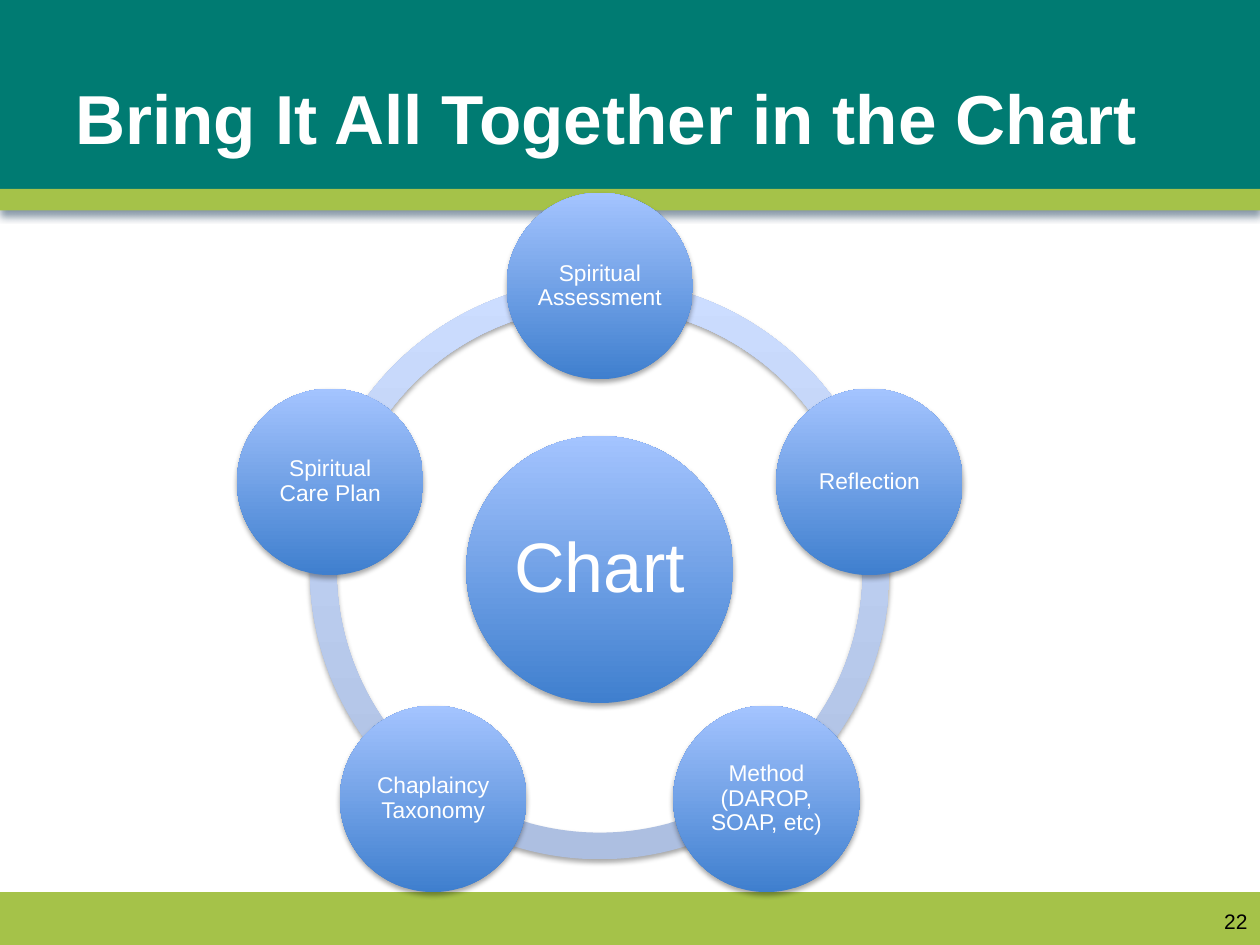
import math

from lxml import etree
from pptx import Presentation
from pptx.dml.color import RGBColor
from pptx.enum import shapes, text
from pptx.oxml.ns import qn
from pptx.util import Inches, Pt

SHAPE = shapes.MSO_SHAPE
ALIGN = text.PP_ALIGN
TEAL, GREEN, WHITE = "007B72", "A5C249", "FFFFFF"
NODE_GRADIENT = ("3F7FCE", "A4C4FF")
RING_GRADIENT = ("ADBFE1", "CCDDFF")
STEPS = ["Spiritual Assessment", "Reflection", "Method (DAROP, SOAP, etc)",
         "Chaplaincy Taxonomy", "Spiritual Care Plan"]


def rgb(value):
    return RGBColor.from_string(value)


def add_shadow(sp, color, alpha, blur, dist):
    effects = sp._element.spPr.find(qn("a:effectLst"))
    shadow = etree.SubElement(effects, qn("a:outerShdw"), blurRad=str(Pt(blur)),
                              dist=str(Pt(dist)), dir="5400000", rotWithShape="0")
    clr = etree.SubElement(shadow, qn("a:srgbClr"), val=color)
    etree.SubElement(clr, qn("a:alpha"), val=str(alpha * 1000))


def add_plain(s, kind, x, y, w, h):
    sp = s.shapes.add_shape(kind, Inches(x), Inches(y), Inches(w), Inches(h))
    sp.shadow.inherit = False
    sp.line.fill.background()
    return sp


def add_band(s, x, y, w, h, color):
    sp = add_plain(s, SHAPE.RECTANGLE, x, y, w, h)
    sp.fill.solid()
    sp.fill.fore_color.rgb = rgb(color)
    return sp


def add_glossy(s, kind, cx, cy, size, gradient):
    """Square shape centred on a point, dark at the bottom and light on top."""
    sp = add_plain(s, kind, cx - size / 2, cy - size / 2, size, size)
    sp.fill.gradient()
    sp.fill.gradient_angle = 90
    for stop, color in zip(sp.fill.gradient_stops, gradient):
        stop.color.rgb = rgb(color)
    add_shadow(sp, "000000", 35, 3.1, 1.8)
    return sp


def set_text(sp, words, size, color, align, bold=False):
    tf = sp.text_frame
    tf.word_wrap = True
    tf.vertical_anchor = text.MSO_ANCHOR.MIDDLE
    tf.text = words
    p = tf.paragraphs[0]
    p.alignment = align
    font = p.runs[0].font
    font.name, font.size, font.bold = "Arial", Pt(size), bold
    font.color.rgb = rgb(color)
    return tf


def add_label(s, x, y, w, h, words, size, color, align, bold=False):
    box = s.shapes.add_textbox(Inches(x), Inches(y), Inches(w), Inches(h))
    set_text(box, words, size, color, align, bold)


def add_node(s, cx, cy, size, words, font_size, inset):
    sp = add_glossy(s, SHAPE.OVAL, cx, cy, size, NODE_GRADIENT)
    tf = set_text(sp, words, font_size, WHITE, ALIGN.CENTER)
    tf.margin_left = tf.margin_right = Inches(inset)
    tf.margin_top = tf.margin_bottom = Inches(inset)
    tf.paragraphs[0].line_spacing = 0.9


def add_header(s, x, y, w, h):
    add_band(s, x, y, w, h - 0.13, TEAL)
    stripe = add_band(s, x, y + h - 0.17, w, 0.17, GREEN)
    add_shadow(stripe, "042747", 48, 4.5, 3)
    add_label(s, x + 0.5, y + 0.3, w - 1, 1.25, "Bring It All Together in the Chart",
              39.6, WHITE, ALIGN.LEFT, bold=True)


def add_footer(s, x, y, w, h):
    add_band(s, x, y, w, h, GREEN)
    add_label(s, x + w - 2.33, y + 0.03, 2.33, 0.4, "22", 12, "000000", ALIGN.RIGHT)


def add_cycle(s, x, y, w, h):
    cx, cy, radius = x + w / 2, y + h / 2, 2.25
    sweep = 360 / len(STEPS)
    angles = [(270 + i * sweep) % 360 for i in range(len(STEPS))]

    # Ring segments between neighbouring nodes
    for start in angles:
        arc = add_glossy(s, SHAPE.BLOCK_ARC, cx, cy, 4.6, RING_GRADIENT)
        # Angle adjustments are 60000ths of a degree, scaled by 100000
        arc.adjustments[0] = start * 0.6
        arc.adjustments[1] = (start + sweep) % 360 * 0.6
        arc.adjustments[2] = 0.046

    # Hub, then the nodes clockwise from the top
    add_node(s, cx, cy, 2.12, "Chart", 40, 0.06)
    for angle, step in zip(angles, STEPS):
        a = math.radians(angle)
        add_node(s, cx + radius * math.cos(a), cy + radius * math.sin(a),
                 1.48, step, 13, 0.02)


def main():
    prs = Presentation()
    prs.slide_width, prs.slide_height = Inches(10), Inches(7.5)
    s = prs.slides.add_slide(prs.slide_layouts[6])
    add_header(s, 0, 0, 10, 1.67)
    add_footer(s, 0, 7.08, 10, 0.42)
    add_cycle(s, 2.46, 2.22, 4.6, 4.6)
    prs.save("out.pptx")


if __name__ == "__main__":
    main()
